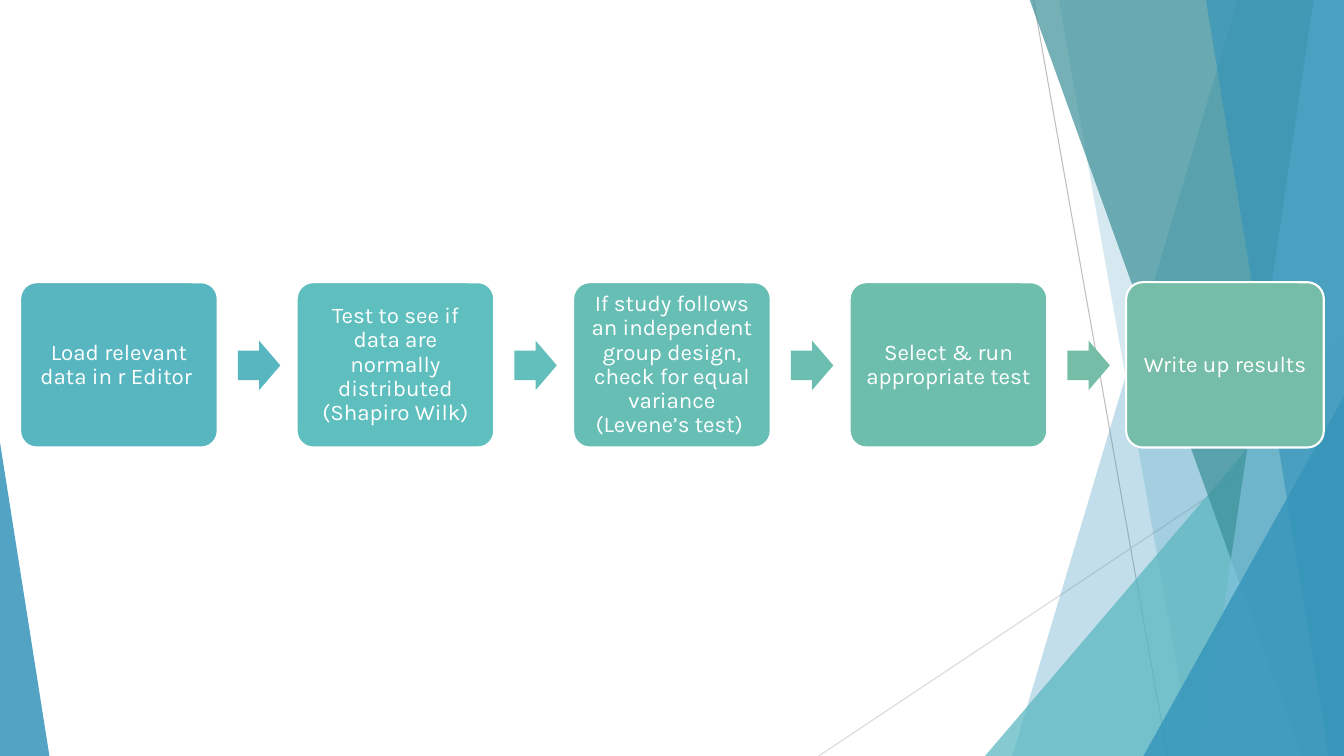
import pptx
import pptx.dml.color
import pptx.enum.shapes
import pptx.enum.text
import pptx.oxml.ns
import pptx.util
from lxml import etree

RGBColor = pptx.dml.color.RGBColor
Shapes = pptx.enum.shapes.MSO_SHAPE

PX = 9144
WIDTH, HEIGHT = 1333, 750
BOX_LEFT, BOX_TOP, BOX_WIDTH, BOX_HEIGHT = 20, 280, 196, 164
STEP_PITCH = 274.25
ARROW_OFFSET, ARROW_TOP, ARROW_WIDTH, ARROW_HEIGHT = 216, 338, 42, 49

WHITE = RGBColor(0xFF, 0xFF, 0xFF)
GREY = RGBColor(0xBF, 0xBF, 0xBF)
LIGHT_GREY = RGBColor(0xD9, 0xD9, 0xD9)
BLUE = RGBColor(0x34, 0x94, 0xBA)
SKY = RGBColor(0x7F, 0xC1, 0xDB)
DARK_TEAL = RGBColor(0x3A, 0x8F, 0x98)
TEAL = RGBColor(0x58, 0xB6, 0xC0)
AQUA = RGBColor(0x5F, 0xBF, 0xBF)
AQUA_ARROW = RGBColor(0x62, 0xBF, 0xBB)
SEA = RGBColor(0x67, 0xBE, 0xB5)
SEA_ARROW = RGBColor(0x6C, 0xBE, 0xB0)
MINT = RGBColor(0x6E, 0xBE, 0xAD)
GREEN = RGBColor(0x75, 0xBD, 0xA7)

STEPS = [
    ("Load relevant data in r Editor ", TEAL, TEAL),
    ("Test to see if data are normally distributed (Shapiro Wilk)", AQUA, AQUA_ARROW),
    ("If study follows an independent group design, check for equal variance (Levene’s test) ",
     SEA, SEA_ARROW),
    ("Select & run appropriate test", MINT, GREEN),
    ("Write up results", GREEN, None),
]


def px(length):
    return pptx.util.Emu(round(length * PX))


def paint(shape, color, opacity=100, outline=None):
    shape.shadow.inherit = False
    shape.fill.solid()
    shape.fill.fore_color.rgb = color
    if opacity < 100:
        tint = shape.fill._xPr.find(".//" + pptx.oxml.ns.qn("a:srgbClr"))
        alpha = etree.SubElement(tint, pptx.oxml.ns.qn("a:alpha"))
        alpha.set("val", str(opacity * 1000))
    if outline is None:
        shape.line.fill.background()
    else:
        shape.line.color.rgb = outline
        shape.line.width = pptx.util.Pt(1.5)


def add_preset(page, kind, left, top, width, height, adjustments, color, **style):
    shape = page.shapes.add_shape(kind, px(left), px(top), px(width), px(height))
    for index, value in enumerate(adjustments):
        shape.adjustments[index] = value
    paint(shape, color, **style)
    return shape


def add_pane(page, top_x, bottom_x, color, opacity):
    builder = page.shapes.build_freeform(top_x, -1, scale=PX)
    builder.add_line_segments([(WIDTH, -1), (WIDTH, HEIGHT), (bottom_x, HEIGHT)], close=True)
    paint(builder.convert_to_shape(), color, opacity)


def add_thin_line(page, start, end, color):
    line = page.shapes.add_connector(
        pptx.enum.shapes.MSO_CONNECTOR.STRAIGHT, *map(px, start + end))
    line.line.color.rgb = color
    line.line.width = pptx.util.Pt(0.75)
    etree.SubElement(line._element.spPr, pptx.oxml.ns.qn("a:effectLst"))


def write_text(shape, text, *, font="Karla", size=16, color=WHITE, inset=7, spacing=0.9):
    frame = shape.text_frame
    frame.word_wrap = True
    frame.vertical_anchor = pptx.enum.text.MSO_ANCHOR.MIDDLE
    frame.margin_left = frame.margin_right = px(inset)
    frame.margin_top = frame.margin_bottom = px(inset)
    para = frame.paragraphs[0]
    para.alignment = pptx.enum.text.PP_ALIGN.CENTER
    para.line_spacing = spacing
    span = para.add_run()
    span.text = text
    span.font.name = font
    span.font.size = pptx.util.Pt(size)
    span.font.color.rgb = color


def add_backdrop(page):
    add_thin_line(page, (1025, 0), (1158, HEIGHT), GREY)
    add_thin_line(page, (WIDTH, 403), (812, HEIGHT), LIGHT_GREY)
    add_pane(page, 1228, 1004, BLUE, 30)
    add_pane(page, 1050, 1183, BLUE, 20)
    add_preset(page, Shapes.ISOSCELES_TRIANGLE, 977, 333, 356, 417, [1], TEAL, opacity=72)
    add_pane(page, 1021, 1291, DARK_TEAL, 70)
    add_pane(page, 1303, 1192, SKY, 70)
    add_pane(page, 1196, 1318, BLUE, 65)
    add_preset(page, Shapes.ISOSCELES_TRIANGLE, 1134, 393, 199, 357, [1], BLUE, opacity=80)
    add_preset(page, Shapes.ISOSCELES_TRIANGLE, 0, 439, 49, 311, [0], BLUE, opacity=85)


def add_step(page, left, text, box_color, arrow_color):
    box = add_preset(page, Shapes.ROUNDED_RECTANGLE, left, BOX_TOP, BOX_WIDTH, BOX_HEIGHT,
                     [0.1], box_color, outline=WHITE)
    write_text(box, text)
    if arrow_color is not None:
        add_preset(page, Shapes.RIGHT_ARROW, left + ARROW_OFFSET, ARROW_TOP,
                   ARROW_WIDTH, ARROW_HEIGHT, [0.6, 0.5], arrow_color)


def main():
    deck = pptx.Presentation()
    deck.slide_width, deck.slide_height = px(WIDTH), px(HEIGHT)
    page = deck.slides.add_slide(deck.slide_layouts[6])
    add_backdrop(page)
    for index, step in enumerate(STEPS):
        add_step(page, BOX_LEFT + index * STEP_PITCH, *step)
    deck.save("out.pptx")


if __name__ == "__main__":
    main()
